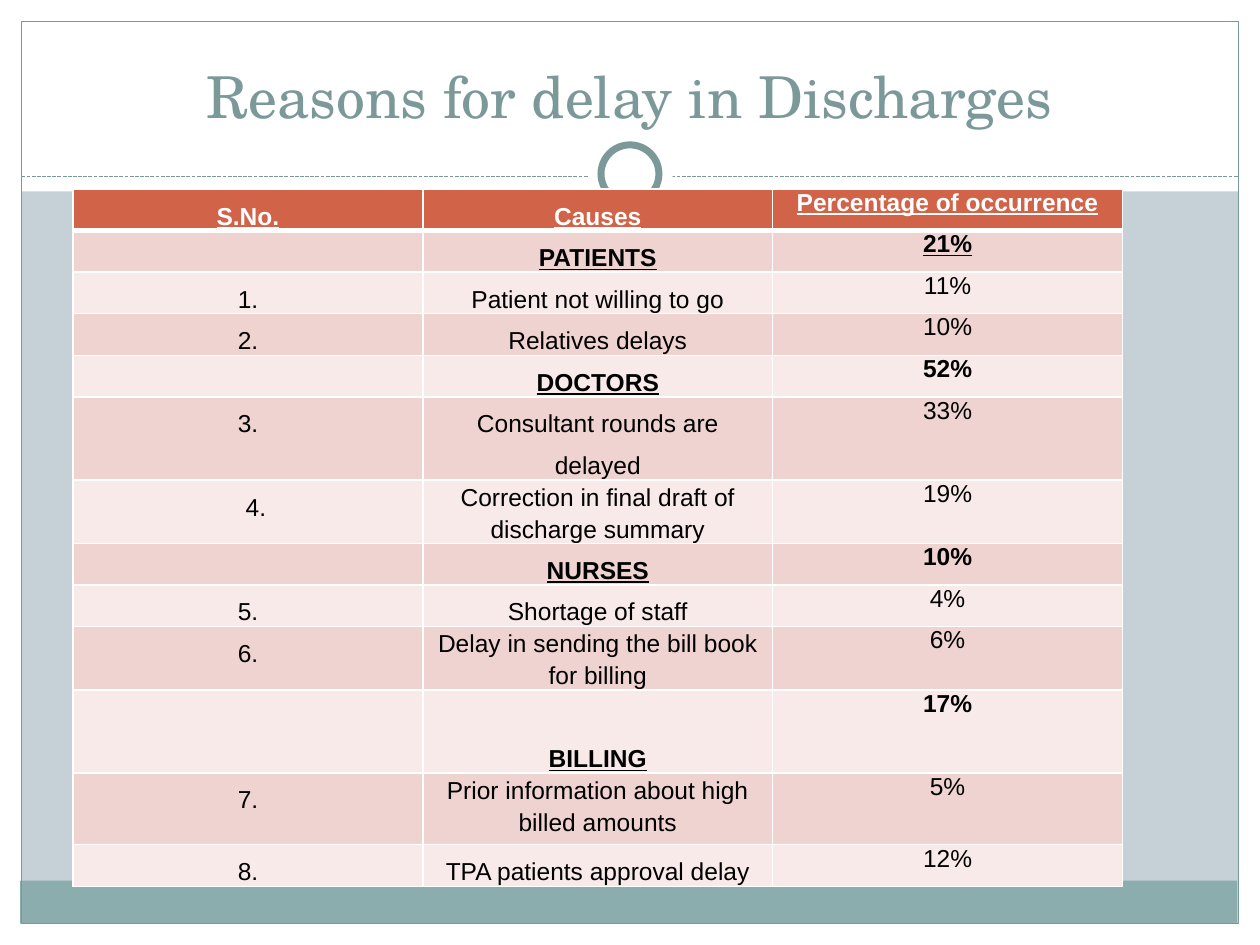
from typing import NamedTuple, Optional

from lxml.etree import SubElement
from pptx import Presentation
from pptx.dml.color import RGBColor as RGB
from pptx.enum.dml import MSO_LINE as Dash
from pptx.enum.shapes import MSO_CONNECTOR as Link, MSO_SHAPE as Kind
from pptx.enum.text import MSO_ANCHOR as Anchor, PP_ALIGN as Align
from pptx.oxml.ns import qn
from pptx.util import Inches, Pt

HEX = {
    "back": "C5D1D7", "white": "FFFFFF", "foot": "8CADAE", "teal": "7C999A",
    "head": "D16349", "dark": "EED3D0", "light": "F7EAE9", "black": "000000",
}


class Part(NamedTuple):
    kind: Kind
    box: tuple
    fill: Optional[str] = None
    line: float = 0


class Row(NamedTuple):
    num: str
    cause: str
    share: str
    high: float = 0.33
    space: float = 1.5
    group: bool = False
    under: bool = False


PARTS = [
    Part(Kind.RECTANGLE, (0, 7.33, 10, 0.17), "white"),
    Part(Kind.RECTANGLE, (0, 0, 10, 1.52), "white"),
    Part(Kind.RECTANGLE, (0, 0, 0.17, 7.5), "white"),
    Part(Kind.RECTANGLE, (9.83, 0, 0.17, 7.5), "white"),
    Part(Kind.RECTANGLE, (0.16, 6.99, 9.66, 0.34), "foot"),
    Part(Kind.RECTANGLE, (0.17, 0.17, 9.66, 7.16), None, 0.75),
]
RING = [
    Part(Kind.OVAL, (4.67, 1.05, 0.67, 0.67), "white"),
    Part(Kind.OVAL, (4.77, 1.15, 0.46, 0.46), "white", 4),
]
ROWS = [
    Row("S.No.", "Causes", "Percentage of occurrence", group=True, under=True),
    Row("", "PATIENTS", "21%", group=True, under=True),
    Row("1.", "Patient not willing to go", "11%"),
    Row("2.", "Relatives delays", "10%"),
    Row("", "DOCTORS", "52%", group=True),
    Row("3.", "Consultant rounds are delayed", "33%", 0.66),
    Row("4.", "Correction in final draft of discharge summary", "19%", 0.5, 1.15),
    Row("", "NURSES", "10%", group=True),
    Row("5.", "Shortage of staff", "4%"),
    Row("6.", "Delay in sending the bill book for billing", "6%", 0.5, 1.15),
    Row("", "BILLING", "17%", 0.66, group=True),
    Row("7.", "Prior information about high billed amounts", "5%", 0.57, 1.15),
    Row("8.", "TPA patients approval delay", "12%"),
]


def tint(name: str) -> RGB:
    return RGB.from_string(HEX[name])


def draw(slide, part: Part) -> None:
    shape = slide.shapes.add_shape(part.kind, *map(Inches, part.box))
    shape.shadow.inherit = False
    if part.fill:
        shape.fill.solid()
        shape.fill.fore_color.rgb = tint(part.fill)
    else:
        shape.fill.background()
    if part.line:
        shape.line.color.rgb = tint("teal")
        shape.line.width = Pt(part.line)
    else:
        shape.line.fill.background()


def rule(slide) -> None:
    ends = map(Inches, (0.17, 1.4, 9.83, 1.4))
    line = slide.shapes.add_connector(Link.STRAIGHT, *ends)
    line.line.color.rgb = tint("teal")
    line.line.width = Pt(0.75)
    line.line.dash_style = Dash.SQUARE_DOT
    SubElement(line._element.spPr, qn("a:effectLst"))


def write(para, text: str, font: str, size: float, color: str,
          bold: bool = False, under: bool = False) -> None:
    run = para.add_run()
    run.text = text
    run.font.name, run.font.size = font, Pt(size)
    run.font.color.rgb = tint(color)
    run.font.bold, run.font.underline = bold, under


def edge(cell, base: float) -> None:
    """White borders; they must come before the fill in the cell."""
    props = cell._tc.get_or_add_tcPr()
    for tag, wide in (("lnL", 1), ("lnR", 1), ("lnT", 1), ("lnB", base)):
        line = SubElement(props, qn(f"a:{tag}"), w=str(Pt(wide)))
        fill = SubElement(line, qn("a:solidFill"))
        SubElement(fill, qn("a:srgbClr"), val=HEX["white"])


def fill_row(table, at: int, row: Row) -> None:
    table.rows[at].height = Inches(row.high)
    shade = "head" if at == 0 else ("dark" if at % 2 else "light")
    for col, text in enumerate((row.num, row.cause, row.share)):
        cell = table.cell(at, col)
        edge(cell, 3 if at == 0 else 1)
        cell.fill.solid()
        cell.fill.fore_color.rgb = tint(shade)
        cell.margin_left = cell.margin_right = Inches(0.07)
        cell.margin_top = cell.margin_bottom = 0
        if not text:
            continue
        para = cell.text_frame.paragraphs[0]
        para.alignment = Align.CENTER
        para.line_spacing = (1.5, row.space, 1.0)[col]
        write(para, text, "Arial", 14, "black" if at else "white",
              row.group, row.group and (col < 2 or row.under))
        if text == "BILLING":
            cell.vertical_anchor = Anchor.BOTTOM
        if text == "4.":  # set slightly right of the other numbers
            para.alignment = Align.LEFT
            cell.margin_left = Inches(1.37)


def main() -> None:
    deck = Presentation()
    deck.slide_width, deck.slide_height = Inches(10), Inches(7.5)
    slide = deck.slides.add_slide(deck.slide_layouts[5])
    slide.background.fill.solid()
    slide.background.fill.fore_color.rgb = tint("back")

    # Frame, dashed rule and ring
    for part in PARTS:
        draw(slide, part)
    rule(slide)
    for part in RING:
        draw(slide, part)

    # Title, raised above the frame
    title = slide.shapes.title
    slide.shapes._spTree.append(title._element)
    title.left, title.top = Inches(0.33), Inches(0.25)
    title.width, title.height = Inches(9.33), Inches(0.83)
    title.text_frame.vertical_anchor = Anchor.BOTTOM
    para = title.text_frame.paragraphs[0]
    para.alignment = Align.CENTER
    write(para, "Reasons for delay in Discharges", "TeX Gyre Schola", 33, "teal")

    # Table of causes
    high = sum(row.high for row in ROWS)
    box = map(Inches, (0.58, 1.5, 8.33, high))
    table = slide.shapes.add_table(len(ROWS), 3, *box).table
    for at, row in enumerate(ROWS):
        fill_row(table, at, row)

    deck.save("out.pptx")


if __name__ == "__main__":
    main()
